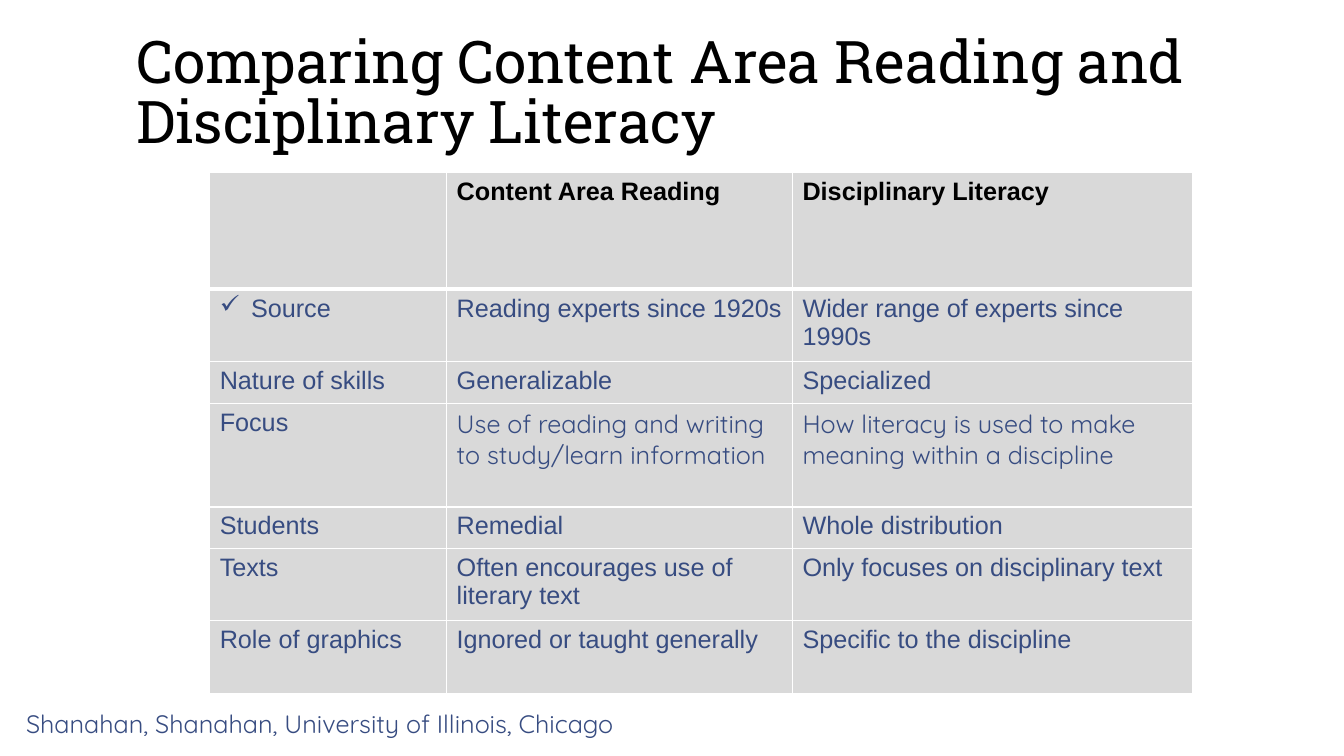
from lxml import etree
from pptx import Presentation
from pptx.dml.color import RGBColor
from pptx.enum.text import MSO_ANCHOR
from pptx.oxml.ns import qn
from pptx.util import Inches, Pt

BOTTOM = MSO_ANCHOR.BOTTOM
BLACK, WHITE, NAVY, GRAY = "000000", "FFFFFF", "374C81", "D9D9D9"
HEADING_FONT, BODY_FONT, TABLE_FONT = "Roboto Slab", "Quicksand", "Arial"

COLUMN_WIDTHS = [2.35, 3.43, 3.97]
ROW_HEIGHTS = [1.16, 0.72, 0.41, 1.03, 0.41, 0.72, 0.72]
COMPARISON = [
    ["", "Content Area Reading", "Disciplinary Literacy"],
    ["Source", "Reading experts since 1920s", "Wider range of experts since 1990s"],
    ["Nature of skills", "Generalizable", "Specialized"],
    ["Focus", "Use of reading and writing to study/learn information",
     "How literacy is used to make meaning within a discipline"],
    ["Students", "Remedial", "Whole distribution"],
    ["Texts", "Often encourages use of literary text",
     "Only focuses on disciplinary text"],
    ["Role of graphics", "Ignored or taught generally", "Specific to the discipline"],
]


def rgb(color):
    return RGBColor.from_string(color)


def add_run(paragraph, text, font_name, size, color, bold=False):
    run = paragraph.add_run()
    run.text = text
    run.font.name = font_name
    run.font.size = Pt(size)
    run.font.bold = bold
    run.font.color.rgb = rgb(color)


def add_text_frame(slide, left, top, width, height):
    box = slide.shapes.add_textbox(
        Inches(left), Inches(top), Inches(width), Inches(height))
    return box.text_frame


def add_title(slide, text):
    frame = add_text_frame(slide, 1.22, 0.08, 11.11, 1.53)
    frame.word_wrap = True
    frame.vertical_anchor = BOTTOM
    frame.margin_left = frame.margin_right = Inches(0.13)
    frame.margin_top = frame.margin_bottom = Inches(0.07)
    paragraph = frame.paragraphs[0]
    paragraph.line_spacing = 0.85
    add_run(paragraph, text, HEADING_FONT, 42, BLACK)


def add_credit(slide, text):
    frame = add_text_frame(slide, 0.16, 6.98, 6.4, 0.4)
    frame.word_wrap = False
    add_run(frame.paragraphs[0], text, BODY_FONT, 18, NAVY)


def add_check_bullet(paragraph):
    properties = paragraph._p.get_or_add_pPr()
    indent = Inches(0.31)
    properties.set("marL", str(indent))
    properties.set("indent", str(-indent))
    etree.SubElement(properties, qn("a:buChar"), char="✓")


def set_borders(cell, top, bottom):
    """Draw white borders, with top and bottom widths in points."""
    properties = cell._tc.get_or_add_tcPr()
    for side, width in (("L", 1), ("R", 1), ("T", top), ("B", bottom)):
        line = etree.SubElement(properties, qn(f"a:ln{side}"), w=str(Pt(width)))
        fill = etree.SubElement(line, qn("a:solidFill"))
        etree.SubElement(fill, qn("a:srgbClr"), val=WHITE)


def add_comparison_table(slide):
    table = slide.shapes.add_table(
        len(ROW_HEIGHTS), len(COLUMN_WIDTHS), Inches(2.08), Inches(1.71),
        Inches(sum(COLUMN_WIDTHS)), Inches(sum(ROW_HEIGHTS))).table
    for column, width in zip(table.columns, COLUMN_WIDTHS):
        column.width = Inches(width)
    for row, height in zip(table.rows, ROW_HEIGHTS):
        row.height = Inches(height)

    for row_index, row_texts in enumerate(COMPARISON):
        is_header = row_index == 0
        for column_index, text in enumerate(row_texts):
            cell = table.cell(row_index, column_index)
            set_borders(cell, top=3 if row_index == 1 else 1,
                        bottom=3 if is_header else 1)
            cell.fill.solid()
            cell.fill.fore_color.rgb = rgb(GRAY)
            paragraph = cell.text_frame.paragraphs[0]
            if text == "Source":
                add_check_bullet(paragraph)
            is_focus_detail = row_texts[0] == "Focus" and column_index > 0
            if text:
                add_run(paragraph, text,
                        BODY_FONT if is_focus_detail else TABLE_FONT, 18,
                        BLACK if is_header else NAVY, bold=is_header)


def main():
    presentation = Presentation()
    presentation.slide_width = Inches(13.33)
    presentation.slide_height = Inches(7.5)
    slide = presentation.slides.add_slide(presentation.slide_layouts[6])
    add_title(slide, "Comparing Content Area Reading and Disciplinary Literacy")
    add_comparison_table(slide)
    add_credit(slide, "Shanahan, Shanahan, University of Illinois, Chicago")
    presentation.save("out.pptx")


if __name__ == "__main__":
    main()
